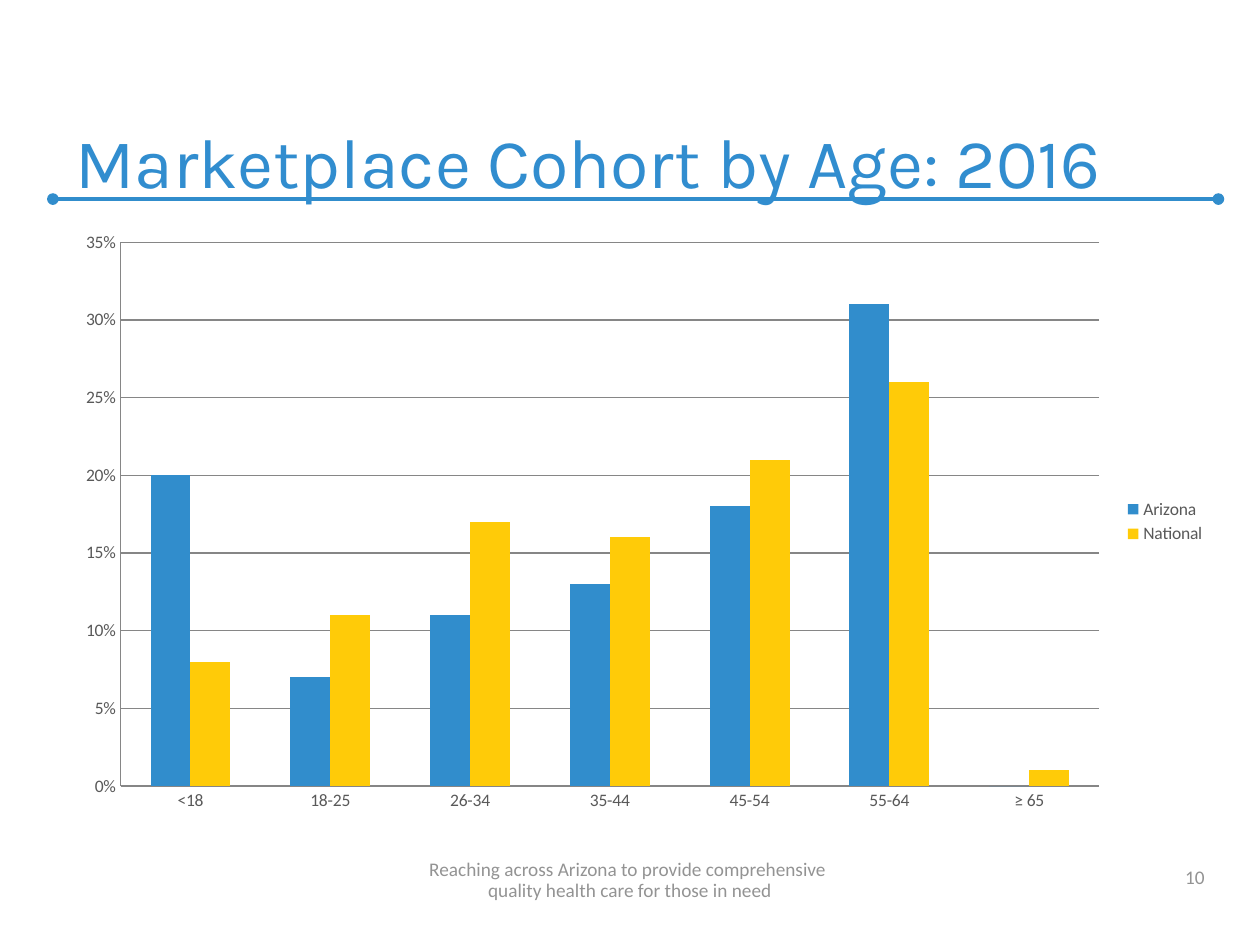
from lxml import etree
from pptx import Presentation
from pptx.chart.data import CategoryChartData
from pptx.dml.color import RGBColor
from pptx.enum.chart import XL_CHART_TYPE, XL_LEGEND_POSITION, XL_TICK_MARK
from pptx.enum.shapes import MSO_CONNECTOR
from pptx.enum.text import MSO_ANCHOR, PP_ALIGN
from pptx.oxml.ns import qn
from pptx.util import Inches, Pt

COLUMNS = XL_CHART_TYPE.COLUMN_CLUSTERED
LEGEND_RIGHT = XL_LEGEND_POSITION.RIGHT
NO_TICKS = XL_TICK_MARK.NONE
STRAIGHT = MSO_CONNECTOR.STRAIGHT
BOTTOM = MSO_ANCHOR.BOTTOM
LEFT, CENTER, RIGHT = PP_ALIGN.LEFT, PP_ALIGN.CENTER, PP_ALIGN.RIGHT

COLORS = {
    "title": "318DCF",
    "blue": "318DCC",
    "yellow": "FFCB08",
    "footer": "939393",
    "chart_text": "595959",
    "grid": "868686",
}
AGE_GROUPS = ["<18", "18-25", "26-34", "35-44", "45-54", "55-64", "≥ 65"]
COHORTS = [
    ("Arizona", "blue", [0.20, 0.07, 0.11, 0.13, 0.18, 0.31, 0]),
    ("National", "yellow", [0.08, 0.11, 0.17, 0.16, 0.21, 0.26, 0.01]),
]


class SlideBuilder:
    heading_font = "Karla"
    body_font = "Calibri"

    def __init__(self, slide):
        self.slide = slide

    def color(self, name):
        return RGBColor.from_string(COLORS[name])

    def style_font(self, font, name, size, color):
        font.name = name
        font.size = Pt(size)
        font.color.rgb = self.color(color)

    def style_line(self, line, color, width):
        line.color.rgb = self.color(color)
        line.width = Pt(width)

    def text(self, box, text, font, size, color, align, spacing=None):
        shape = self.slide.shapes.add_textbox(*map(Inches, box))
        frame = shape.text_frame
        frame.word_wrap = True
        frame.vertical_anchor = BOTTOM
        paragraph = frame.paragraphs[0]
        paragraph.text = text
        paragraph.alignment = align
        if spacing:
            paragraph.line_spacing = Pt(spacing)
        self.style_font(paragraph.font, font, size, color)

    def dotted_end_rule(self, left, right, top):
        rule = self.slide.shapes.add_connector(
            STRAIGHT, Inches(left), Inches(top), Inches(right), Inches(top))
        self.style_line(rule.line, "blue", 2.25)
        line = rule.line._get_or_add_ln()
        for end in ("a:headEnd", "a:tailEnd"):
            etree.SubElement(line, qn(end), type="oval")
        etree.SubElement(rule._element.spPr, qn("a:effectLst"))

    def column_chart(self, box, categories, series_list):
        data = CategoryChartData(number_format="0%")
        data.categories = categories
        for name, _, values in series_list:
            data.add_series(name, values)
        chart = self.slide.shapes.add_chart(
            COLUMNS, *map(Inches, box), data).chart
        self.style_font(chart.font, self.body_font, 10, "chart_text")
        chart.has_title = False

        # Legend
        chart.has_legend = True
        chart.legend.position = LEGEND_RIGHT
        chart.legend.include_in_layout = False

        # Columns
        plot = chart.plots[0]
        plot.gap_width = 150
        plot.overlap = 0
        plot.vary_by_categories = False
        for series, (_, color, _) in zip(plot.series, series_list):
            series.format.fill.solid()
            series.format.fill.fore_color.rgb = self.color(color)

        # Axes
        for axis in (chart.category_axis, chart.value_axis):
            axis.major_tick_mark = NO_TICKS
            axis.minor_tick_mark = NO_TICKS
            self.style_line(axis.format.line, "grid", 0.75)
        value_axis = chart.value_axis
        value_axis.minimum_scale = 0
        value_axis.maximum_scale = 0.35
        value_axis.major_unit = 0.05
        value_axis.tick_labels.number_format = "0%"
        value_axis.tick_labels.number_format_is_linked = False
        value_axis.has_major_gridlines = True
        self.style_line(value_axis.major_gridlines.format.line, "grid", 0.75)


def main():
    presentation = Presentation()
    presentation.slide_width = Inches(10)
    presentation.slide_height = Inches(7.5)
    slide = presentation.slides.add_slide(presentation.slide_layouts[6])
    builder = SlideBuilder(slide)

    # Heading
    builder.dotted_end_rule(0.42, 9.67, 1.58)
    builder.text((0.5, 0.33, 9.08, 1.33), "Marketplace Cohort by Age: 2016",
                 builder.heading_font, 40, "title", LEFT)

    # Footer
    builder.text((7.33, 6.78, 2.33, 0.32), "10",
                 builder.body_font, 11, "footer", RIGHT)
    builder.text((0, 6.78, 10, 0.42),
                 "Reaching across Arizona to provide comprehensive \n"
                 "quality health care for those in need".replace("\n", "\v"),
                 builder.body_font, 11, "footer", CENTER, spacing=12)

    # Age chart
    builder.column_chart((0.5, 1.75, 9.17, 4.78), AGE_GROUPS, COHORTS)

    presentation.save("out.pptx")


if __name__ == "__main__":
    main()
